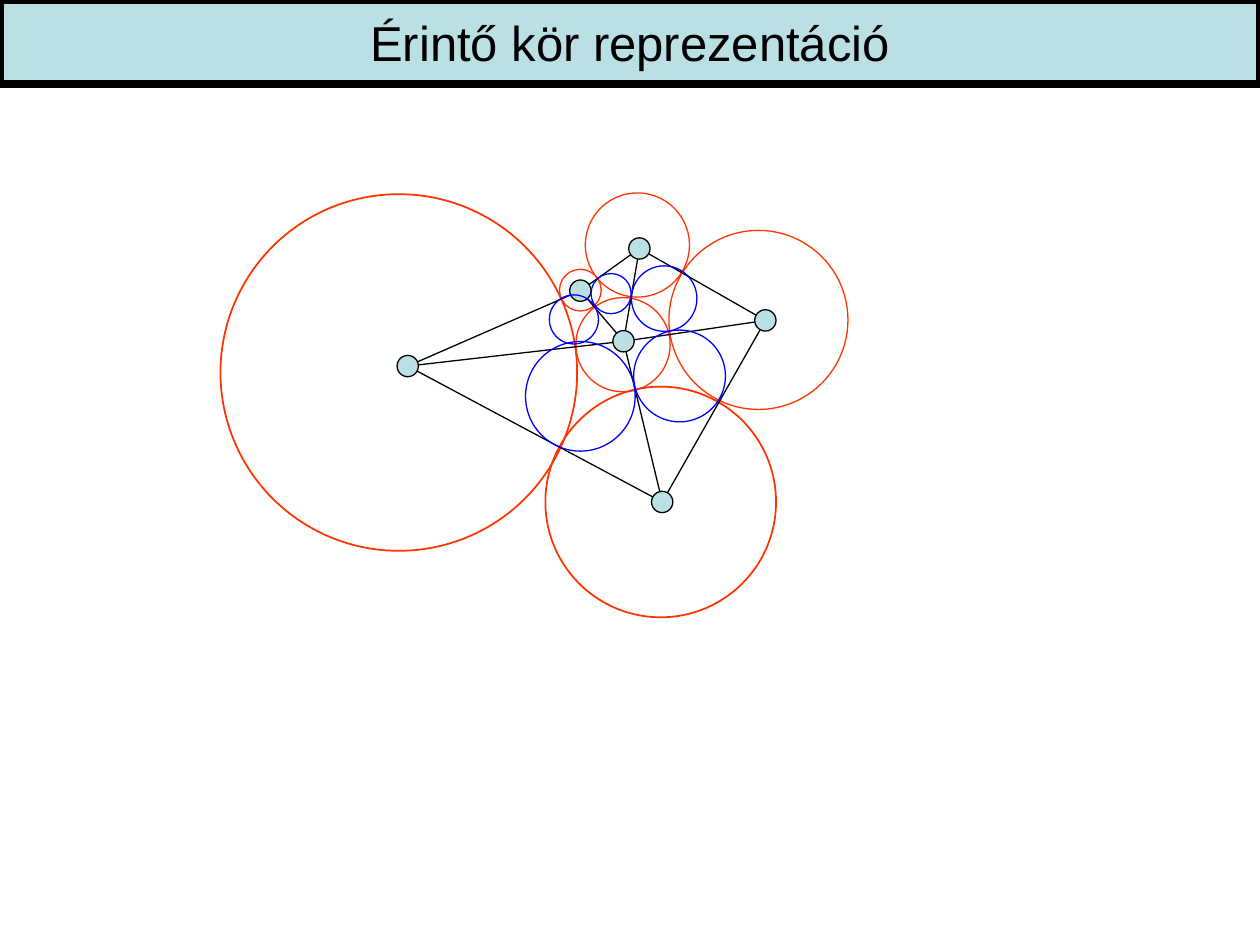
from dataclasses import dataclass

from lxml import etree
from pptx import Presentation
from pptx.dml.color import RGBColor
from pptx.enum.shapes import MSO_CONNECTOR, MSO_SHAPE
from pptx.enum.text import MSO_ANCHOR, MSO_AUTO_SIZE, PP_ALIGN
from pptx.oxml.ns import qn
from pptx.util import Cm, Pt

OVAL = MSO_SHAPE.OVAL
LINE = MSO_CONNECTOR.STRAIGHT
MIDDLE = MSO_ANCHOR.MIDDLE
CENTER = PP_ALIGN.CENTER
FIXED = MSO_AUTO_SIZE.NONE

COLORS = {"ink": "000000", "fill": "BBE0E3", "red": "FF3300", "blue": "0000FF"}
DOT = 0.43


@dataclass
class Disc:
    x: float
    y: float
    size: float
    width: float = 0.75


REDS = [
    Disc(12.56, 6.95, 1.9),
    Disc(13.32, 10.12, 4.65, 1),
    Disc(8.04, 7.51, 7.19, 1),
    Disc(15.29, 6.45, 3.61),
    Disc(12.85, 4.94, 2.1),
    Disc(11.7, 5.85, 0.84),
]
BLUES = [
    Disc(11.7, 7.99, 2.21),
    Disc(13.7, 7.58, 1.85),
    Disc(13.39, 6.02, 1.32),
    Disc(11.57, 6.44, 0.99),
    Disc(12.32, 5.92, 0.81),
]
NODES = {
    "top": Disc(12.89, 5.01, DOT),
    "inner": Disc(11.7, 5.86, DOT),
    "hub": Disc(12.57, 6.88, DOT),
    "right": Disc(15.43, 6.46, DOT),
    "left": Disc(8.22, 7.38, DOT),
    "base": Disc(13.35, 10.12, DOT),
}
RING = ["top", "right", "base", "left", "inner"]
EDGES = list(zip(RING, RING[1:] + RING[:1])) + [("hub", name) for name in RING]


def color(name: str) -> RGBColor:
    return RGBColor.from_string(COLORS[name])


def stroke(shape, name: str, width: float) -> None:
    shape.line.color.rgb = color(name)
    shape.line.width = Pt(width)


def paint(shape, name: str) -> None:
    shape.fill.solid()
    shape.fill.fore_color.rgb = color(name)


def draw_disc(shapes, disc: Disc, line: str, fill: str = "") -> None:
    half = disc.size / 2
    shape = shapes.add_shape(
        OVAL, Cm(disc.x - half), Cm(disc.y - half), Cm(disc.size), Cm(disc.size)
    )
    shape.shadow.inherit = False
    stroke(shape, line, disc.width)
    if fill:
        paint(shape, fill)
    else:
        shape.fill.background()


def draw_edge(shapes, start: Disc, end: Disc) -> None:
    edge = shapes.add_connector(
        LINE, Cm(start.x), Cm(start.y), Cm(end.x), Cm(end.y)
    )
    stroke(edge, "ink", 0.75)
    etree.SubElement(edge._element.spPr, qn("a:effectLst"))


def draw_title(title, text: str) -> None:
    title.left, title.top = Cm(0), Cm(0)
    title.width, title.height = Cm(25.4), Cm(1.7)
    paint(title, "fill")
    stroke(title, "ink", 4.5)
    frame = title.text_frame
    frame.auto_size = FIXED
    frame.word_wrap = True
    frame.vertical_anchor = MIDDLE
    para = frame.paragraphs[0]
    para.alignment = CENTER
    run = para.add_run()
    run.text = text
    run.font.name = "Arial"
    run.font.size = Pt(28)
    run.font.color.rgb = color("ink")


def main() -> None:
    deck = Presentation()
    deck.slide_width, deck.slide_height = Cm(25.4), Cm(19.05)
    slide = deck.slides.add_slide(deck.slide_layouts[5])
    shapes = slide.shapes
    draw_title(shapes.title, "Érintő kör reprezentáció")
    for disc in REDS:
        draw_disc(shapes, disc, "red")
    for start, end in EDGES:
        draw_edge(shapes, NODES[start], NODES[end])
    for node in NODES.values():
        draw_disc(shapes, node, "ink", "fill")
    group = shapes.add_group_shape()
    for disc in BLUES:
        draw_disc(group.shapes, disc, "blue")
    deck.save("out.pptx")


if __name__ == "__main__":
    main()
